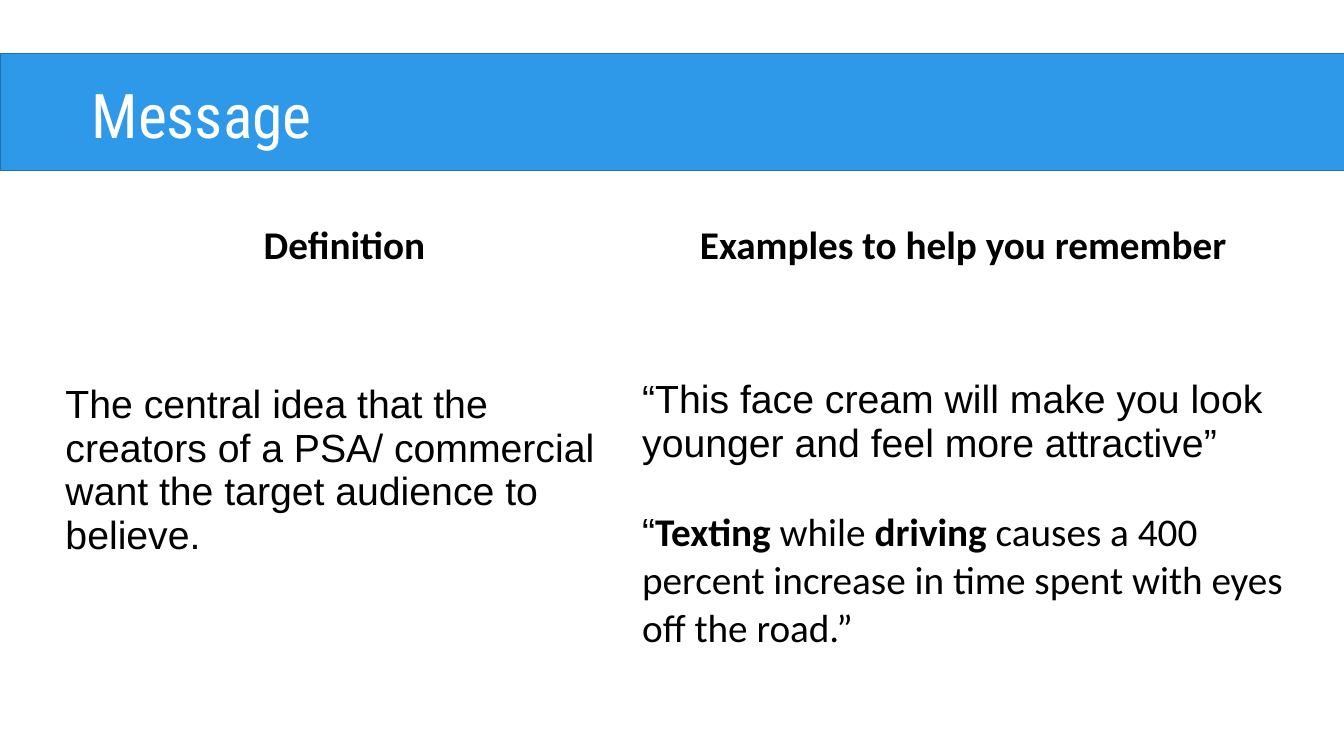
"""Build the Message slide: a title band above a definition and examples table."""
from pptx import Presentation
from pptx.dml.color import RGBColor
from pptx.enum.shapes import MSO_SHAPE
from pptx.enum.text import MSO_ANCHOR, PP_ALIGN
from pptx.util import Inches, Pt

BLUE = RGBColor(0x2E, 0x99, 0xE9)
EDGE = RGBColor(0x22, 0x71, 0xAC)
WHITE = RGBColor(0xFF, 0xFF, 0xFF)
BLACK = RGBColor(0, 0, 0)

TITLE = "Message"
HEADINGS = ["Definition ", "Examples to help you remember "]
DEFINITION = ("The central idea that the creators of a PSA/ commercial "
              "want the target audience to believe.")
CREAM = "“This face cream will make you look younger and feel more attractive”"
TEXTING = [
    ("“", "Arial", False),
    ("Texting", "Calibri", True),
    (" while ", "Calibri", False),
    ("driving", "Calibri", True),
    (" causes a 400 percent increase in time spent with eyes off the road.”",
     "Calibri", False),
]
COLS = [0.37, 5.72, 6.55]
ROWS = [1.17, 3.49]
LEFT, TOP = 0.23, 2.2
BLANK_LINE = 0.43


def add_run(p, text, font="Arial", size=28, color=BLACK, bold=False):
    r = p.add_run()
    r.text = text
    r.font.name, r.font.size, r.font.bold = font, Pt(size), bold
    r.font.color.rgb = color


def add_band(s):
    band = s.shapes.add_shape(MSO_SHAPE.RECTANGLE, 0, Inches(0.53),
                              Inches(13.39), Inches(1.16))
    band.shadow.inherit = False
    band.fill.solid()
    band.fill.fore_color.rgb = BLUE
    band.line.color.rgb = EDGE
    band.line.width = Pt(1)


def add_title(s):
    tf = s.shapes.add_textbox(Inches(0.81), Inches(0.64),
                              Inches(10.3), Inches(0.98)).text_frame
    tf.word_wrap = True
    tf.vertical_anchor = MSO_ANCHOR.MIDDLE
    add_run(tf.paragraphs[0], TITLE, font="Roboto Condensed", size=44, color=WHITE)


def add_grid(s):
    table = s.shapes.add_table(len(ROWS), len(COLS), Inches(LEFT), Inches(TOP),
                               Inches(sum(COLS)), Inches(sum(ROWS))).table
    table.first_row = table.horz_banding = False
    for col, width in zip(table.columns, COLS):
        col.width = Inches(width)
    for row, height in zip(table.rows, ROWS):
        row.height = Inches(height)
    for cell in table.iter_cells():
        cell.fill.background()
        cell.margin_left = cell.margin_right = Inches(0.05)
        cell.margin_top = cell.margin_bottom = 0

    for i, heading in enumerate(HEADINGS, 1):
        p = table.cell(0, i).text_frame.paragraphs[0]
        p.alignment = PP_ALIGN.CENTER
        add_run(p, heading, font="Calibri", bold=True)

    definition, examples = table.cell(1, 1), table.cell(1, 2)
    definition.margin_top = Inches(BLANK_LINE)
    add_run(definition.text_frame.paragraphs[0], DEFINITION)

    examples.vertical_anchor = MSO_ANCHOR.MIDDLE
    tf = examples.text_frame
    add_run(tf.paragraphs[0], CREAM)
    p = tf.add_paragraph()
    p.space_before = Inches(BLANK_LINE)
    for text, font, bold in TEXTING:
        add_run(p, text, font=font, bold=bold)


def main():
    prs = Presentation()
    prs.slide_width, prs.slide_height = Inches(13.33), Inches(7.5)
    s = prs.slides.add_slide(prs.slide_layouts[6])
    add_band(s)
    add_grid(s)
    add_title(s)
    prs.save("out.pptx")


if __name__ == "__main__":
    main()
